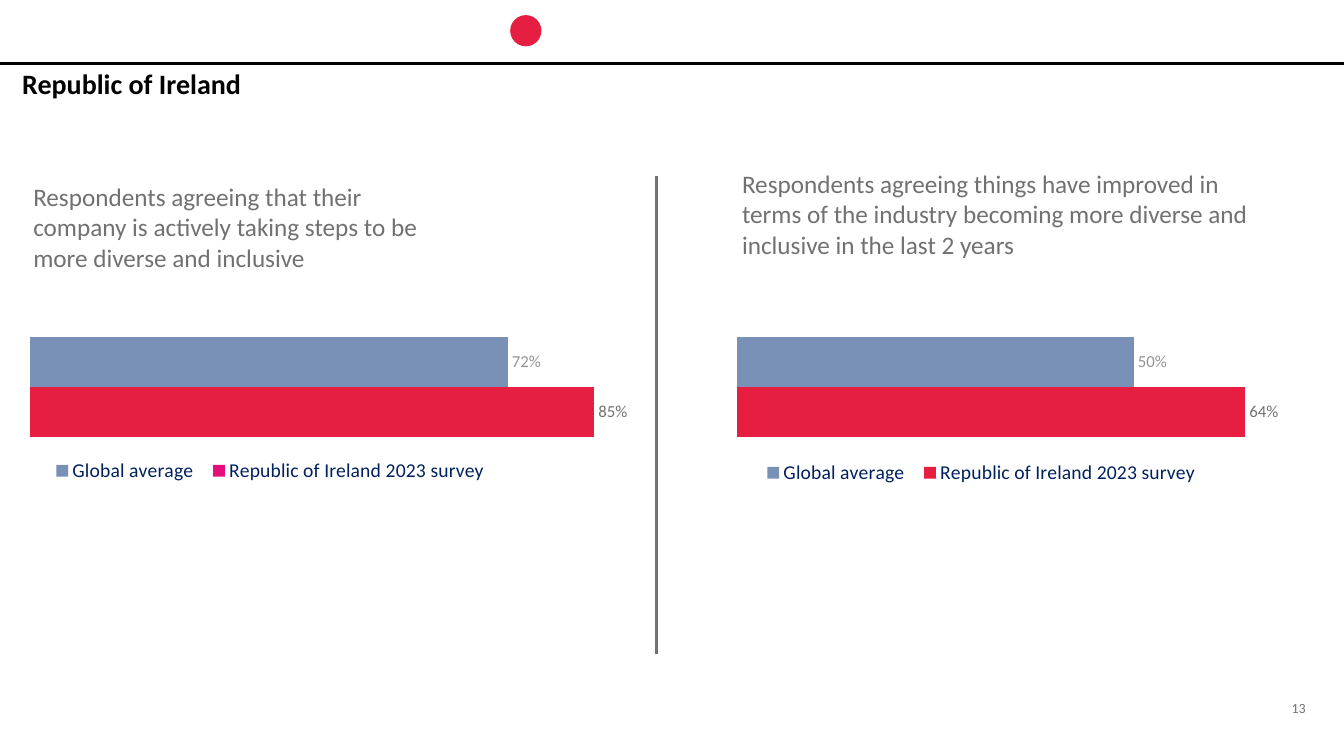
from lxml import etree
from pptx import Presentation
from pptx.chart.data import CategoryChartData
from pptx.dml.color import RGBColor
from pptx.enum import chart as ch, shapes, text
from pptx.oxml import parse_xml
from pptx.oxml.ns import nsdecls, qn
from pptx.util import Inches, Pt

FONT = "Calibri"
COLORS = {"black": "000000", "grey": "717171", "light": "949494", "navy": "002060",
          "red": "E51E42", "pink": "E60D7F", "blue": "7990B7"}

TEXTS = [
    ("Republic of Ireland", (0.22, 0.66, 7.12, 0.52), 20, "black", {"bold": True}),
    ("Respondents agreeing things have improved in terms of the industry becoming "
     "more diverse and inclusive in the last 2 years", (7.36, 1.67, 5.23, 0.52), 18, "grey", {}),
    ("Respondents agreeing that their company is actively taking steps to be more "
     "diverse and inclusive", (0.33, 1.8, 3.99, 0.91), 18, "grey", {}),
    ("13", (11.89, 6.91, 1.06, 0.22), 10, "grey",
     {"align": text.PP_ALIGN.RIGHT, "anchor": text.MSO_ANCHOR.MIDDLE}),
]
LINES = [((0, 0.63), (13.33, 0.63), "black", 1.5), ((6.51, 6.49), (6.51, 1.75), "grey", 2)]
SERIES = ["Republic of Ireland 2023 survey", "Global average"]
LABEL_COLORS = ["grey", "light"]
CHARTS = [
    {"box": (-1.46, 2.62, 7.98, 2.7), "vals": [0.85, 0.72], "max": 0.9,
     "key": "pink", "legend": (0.43, 4.51)},
    {"box": (5.67, 2.62, 7.43, 2.7), "vals": [0.64, 0.5], "max": 0.7,
     "key": "red", "legend": (7.48, 4.53)},
]
LEGEND_SIZE = (4.5, 0.32)
PLOT = (0.22, 0.067, 0.743, 0.768)


def rgb(name):
    return RGBColor.from_string(COLORS[name])


def style(font, size, color):
    font.name, font.size = FONT, Pt(size)
    font.color.rgb = rgb(color)


def add_text(s, content, box, size, color, bold=False,
             align=text.PP_ALIGN.LEFT, anchor=text.MSO_ANCHOR.TOP):
    tf = s.shapes.add_textbox(*map(Inches, box)).text_frame
    tf.word_wrap = True
    tf.margin_left = tf.margin_right = tf.margin_top = tf.margin_bottom = 0
    tf.vertical_anchor = anchor
    p = tf.paragraphs[0]
    p.alignment = align
    r = p.add_run()
    r.text = content
    style(r.font, size, color)
    r.font.bold = bold


def add_line(s, start, end, color, width):
    line = s.shapes.add_connector(shapes.MSO_CONNECTOR.STRAIGHT, *map(Inches, start + end))
    line.line.color.rgb = rgb(color)
    line.line.width = Pt(width)
    etree.SubElement(line._element.spPr, qn("a:effectLst"))


def layout(box, inner=False):
    target = '<c:layoutTarget val="inner"/>' if inner else ""
    modes = "".join(f'<c:{m}Mode val="edge"/>' for m in "xy")
    sizes = "".join(f'<c:{n} val="{v:.3f}"/>' for n, v in zip("xywh", box))
    return parse_xml(f'<c:layout {nsdecls("c")}><c:manualLayout>{target}{modes}{sizes}'
                     '</c:manualLayout></c:layout>')


def add_bars(s, item):
    data = CategoryChartData(number_format="0%")
    data.categories = ["1"]
    for name, value in zip(SERIES, item["vals"]):
        data.add_series(name, [value])
    chart = s.shapes.add_chart(ch.XL_CHART_TYPE.BAR_CLUSTERED,
                               *map(Inches, item["box"]), data).chart
    style(chart.font, 10, "grey")
    chart.has_title = False
    chart.category_axis.visible = chart.value_axis.visible = False
    chart.value_axis.has_major_gridlines = False
    chart.value_axis.minimum_scale, chart.value_axis.maximum_scale = 0, item["max"]

    plot = chart.plots[0]
    plot.gap_width, plot.overlap, plot.vary_by_categories = 219, 0, False
    for series, color, label_color in zip(plot.series, [item["key"], "blue"], LABEL_COLORS):
        series.format.fill.solid()
        series.format.fill.fore_color.rgb = rgb(color)
        labels = series.data_labels
        labels.show_value = True
        labels.number_format, labels.number_format_is_linked = "0%", False
        labels.position = ch.XL_LABEL_POSITION.OUTSIDE_END
        style(labels.font, 12, label_color)
    if item["key"] != "red":
        fill = plot.series[0].points[0].format.fill
        fill.solid()
        fill.fore_color.rgb = rgb("red")

    chart.has_legend = True
    legend = chart.legend
    legend.position = ch.XL_LEGEND_POSITION.BOTTOM
    legend.include_in_layout = False
    style(legend.font, 14, "navy")
    left, top, width, height = item["box"]
    x, y = item["legend"]
    legend_box = ((x - left) / width, (y - top) / height,
                  LEGEND_SIZE[0] / width, LEGEND_SIZE[1] / height)
    for parent, new, index in ((legend._element, layout(legend_box), 1),
                               (chart._chartSpace.chart.plotArea, layout(PLOT, True), 0)):
        for old in parent.findall(qn("c:layout")):
            parent.remove(old)
        parent.insert(index, new)


def main():
    prs = Presentation()
    prs.slide_width, prs.slide_height = Inches(13.33), Inches(7.5)
    s = prs.slides.add_slide(prs.slide_layouts[6])
    dot = s.shapes.add_shape(shapes.MSO_SHAPE.OVAL, *map(Inches, (5.06, 0.15, 0.31, 0.31)))
    dot.shadow.inherit = False
    dot.fill.solid()
    dot.fill.fore_color.rgb = rgb("red")
    dot.line.fill.background()
    for item in CHARTS:
        add_bars(s, item)
    for content, box, size, color, options in TEXTS:
        add_text(s, content, box, size, color, **options)
    for line in LINES:
        add_line(s, *line)
    prs.save("out.pptx")


if __name__ == "__main__":
    main()
